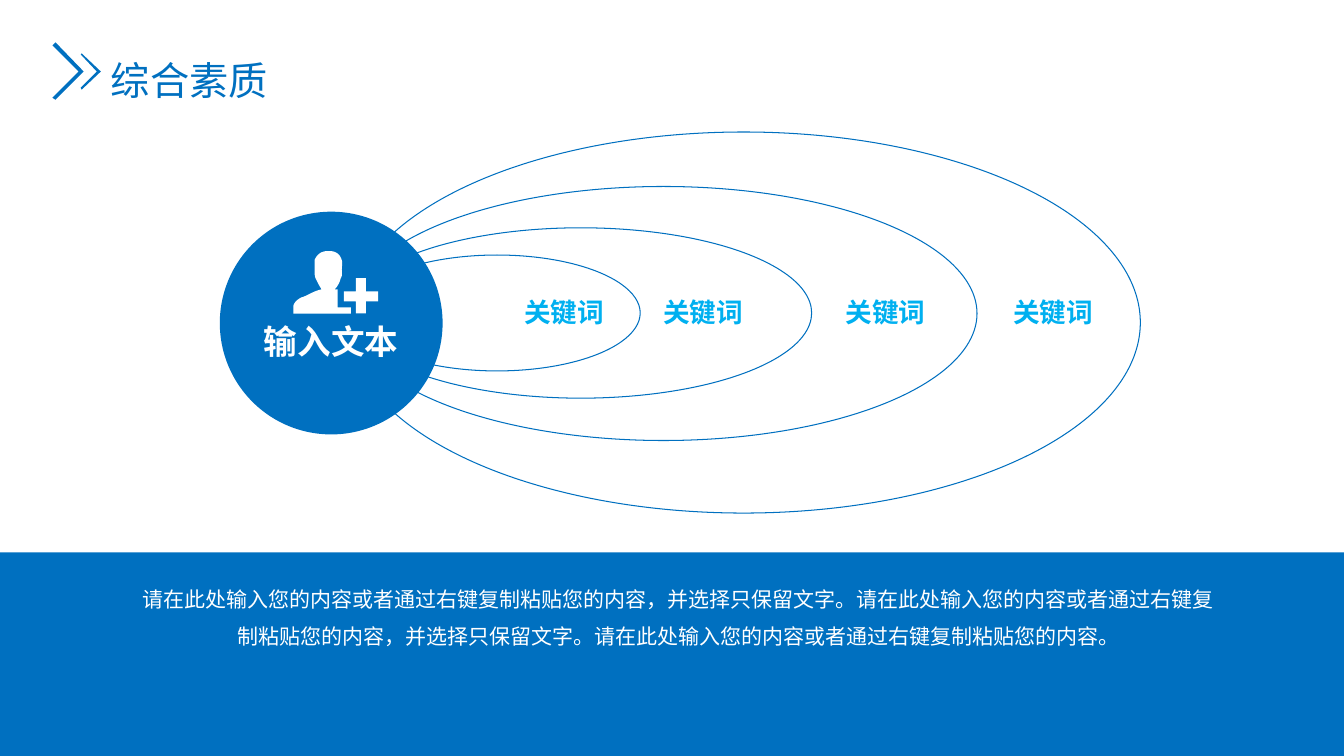
from dataclasses import dataclass

from lxml import etree
from pptx import Presentation
from pptx.dml.color import RGBColor
from pptx.enum.shapes import MSO_SHAPE
from pptx.enum.text import MSO_ANCHOR, MSO_AUTO_SIZE, PP_ALIGN
from pptx.oxml.ns import qn
from pptx.util import Pt

OVAL, RECT = MSO_SHAPE.OVAL, MSO_SHAPE.RECTANGLE
LEFT, CENTER = PP_ALIGN.LEFT, PP_ALIGN.CENTER
TOP, MIDDLE = MSO_ANCHOR.TOP, MSO_ANCHOR.MIDDLE
GROW, FIXED = MSO_AUTO_SIZE.SHAPE_TO_FIT_TEXT, MSO_AUTO_SIZE.NONE

# Content; boxes are (left, top, width, height) in px
SLIDE_SIZE = (1333, 750)
TITLE = ("综合素质", (100, 28, 177, 72))
CORE = ("输入文本", (218, 210, 221, 221))
RINGS = [(351, 253, 284, 115), (347, 226, 458, 169),
         (347, 185, 622, 252), (344, 131, 787, 378)]
KEYWORD = "关键词"
KEYWORD_BOXES = [(510, 273, 109, 52), (648, 273, 168, 52),
                 (829, 273, 168, 52), (995, 273, 168, 52)]
BAND = (0, 548, 1333, 202)
DESCRIPTION = (
    "请在此处输入您的内容或者通过右键复制粘贴您的内容，并选择只保留文字。"
    "请在此处输入您的内容或者通过右键复制粘贴您的内容，并选择只保留文字。"
    "请在此处输入您的内容或者通过右键复制粘贴您的内容。",
    (128, 564, 1090, 86),
)
CHEVRONS = [
    [(81, 53), (100, 71), (81, 89), (80, 87), (96, 71), (80, 54)],
    [(55, 42), (83, 71), (55, 99), (52, 97), (78, 71), (52, 45)],
]
# Each step is one point (line) or two controls and an end (curve)
PERSON_START = (348, 305)
PERSON_STEPS = [
    [(335, 305)], [(335, 287)],
    [(335, 287), (333, 287), (332, 287)],
    [(335, 284), (337, 280), (338, 276)],
    [(340, 273), (339, 270), (339, 267)],
    [(339, 265), (340, 261), (339, 258)],
    [(337, 251), (332, 249), (326, 249)],
    [(320, 249), (315, 251), (312, 258)],
    [(312, 261), (312, 265), (312, 267)],
    [(312, 270), (312, 273), (313, 276)],
    [(315, 280), (317, 284), (319, 287)],
    [(310, 289), (304, 294), (299, 295)],
    [(291, 299), (291, 304), (291, 304)],
    [(291, 311)], [(348, 311)],
]
PLUS_X = (341, 353, 363, 375)
PLUS_Y = (276, 289, 299, 311)
CURVE_STEPS = 10


@dataclass(frozen=True)
class Theme:
    blue: RGBColor = RGBColor(0x00, 0x70, 0xC0)
    cyan: RGBColor = RGBColor(0x00, 0xB0, 0xF0)
    white: RGBColor = RGBColor(0xFF, 0xFF, 0xFF)
    cjk: str = "Noto Sans CJK SC"
    latin: str = "Arial"
    title: int = 28
    core: int = 24
    keyword: int = 19
    body: int = 15
    line: float = 0.75


THEME = Theme()


def px(length):
    return round(length * 9144)


def emu(lengths):
    return [px(length) for length in lengths]


def write(shape, text, *, size, color, font=THEME.cjk, bold=False, align=LEFT,
          anchor=TOP, spacing=1.5, wrap=True, fit=GROW, insets=(10, 5, 10, 5)):
    frame = shape.text_frame
    frame.word_wrap = wrap
    frame.auto_size = fit
    frame.vertical_anchor = anchor
    (frame.margin_left, frame.margin_top,
     frame.margin_right, frame.margin_bottom) = emu(insets)
    paragraph = frame.paragraphs[0]
    paragraph.alignment = align
    paragraph.line_spacing = spacing
    run = paragraph.add_run()
    run.text = text
    run.font.size = Pt(size)
    run.font.bold = bold
    run.font.color.rgb = color
    run.font.name = font
    east_asian = etree.SubElement(run.font._element, qn("a:ea"))
    east_asian.set("typeface", THEME.cjk)


def paint(shape, fill=None, line=None):
    shape.shadow.inherit = False
    if fill is None:
        shape.fill.background()
    else:
        shape.fill.solid()
        shape.fill.fore_color.rgb = fill
    if line is None:
        shape.line.fill.background()
    else:
        shape.line.color.rgb = line
        shape.line.width = Pt(THEME.line)
    return shape


def add_outline(shapes, contours, fill):
    """Draw closed contours of px points as a single freeform."""
    first, *others = [[emu(point) for point in contour] for contour in contours]
    builder = shapes.build_freeform(*first[0], scale=1.0)
    builder.add_line_segments(first[1:], close=True)
    for contour in others:
        builder.move_to(*contour[0])
        builder.add_line_segments(contour[1:], close=True)
    return paint(builder.convert_to_shape(), fill)


def flatten(start, steps):
    """Turn lines and cubic curves into a list of points."""
    points = [start]
    for step in steps:
        if len(step) == 1:
            points += step
            continue
        controls = [points[-1], *step]
        for i in range(1, CURVE_STEPS + 1):
            t = i / CURVE_STEPS
            weights = ((1 - t) ** 3, 3 * t * (1 - t) ** 2, 3 * t * t * (1 - t), t ** 3)
            points.append(tuple(sum(w * c for w, c in zip(weights, axis))
                                for axis in zip(*controls)))
    return points


def plus_outline(xs, ys):
    x0, x1, x2, x3 = xs
    y0, y1, y2, y3 = ys
    return [(x3, y1), (x2, y1), (x2, y0), (x1, y0), (x1, y1), (x0, y1),
            (x0, y2), (x1, y2), (x1, y3), (x2, y3), (x2, y2), (x3, y2)]


def main():
    prs = Presentation()
    prs.slide_width, prs.slide_height = emu(SLIDE_SIZE)
    slide = prs.slides.add_slide(prs.slide_layouts[5])
    shapes = slide.shapes

    add_outline(shapes, CHEVRONS, THEME.blue)

    heading, box = TITLE
    title = shapes.title
    title.left, title.top, title.width, title.height = emu(box)
    write(title, heading, size=THEME.title, color=THEME.blue, wrap=False)

    paint(shapes.add_shape(RECT, *emu(BAND)), THEME.blue)
    for ring in RINGS:
        paint(shapes.add_shape(OVAL, *emu(ring)), line=THEME.blue)
    for box in KEYWORD_BOXES:
        write(shapes.add_textbox(*emu(box)), KEYWORD, size=THEME.keyword,
              color=THEME.cyan, bold=True)

    description, box = DESCRIPTION
    write(shapes.add_textbox(*emu(box)), description, size=THEME.body,
          color=THEME.white, font=THEME.latin, align=CENTER)

    label, box = CORE
    core = paint(shapes.add_shape(OVAL, *emu(box)), THEME.blue)
    write(core, label, size=THEME.core, color=THEME.white, bold=True, align=CENTER,
          anchor=MIDDLE, spacing=1.0, fit=FIXED, insets=(5, 41, 5, 5))

    icon = shapes.add_group_shape().shapes
    for contour in (flatten(PERSON_START, PERSON_STEPS), plus_outline(PLUS_X, PLUS_Y)):
        add_outline(icon, [contour], THEME.white)

    prs.save("out.pptx")


if __name__ == "__main__":
    main()
